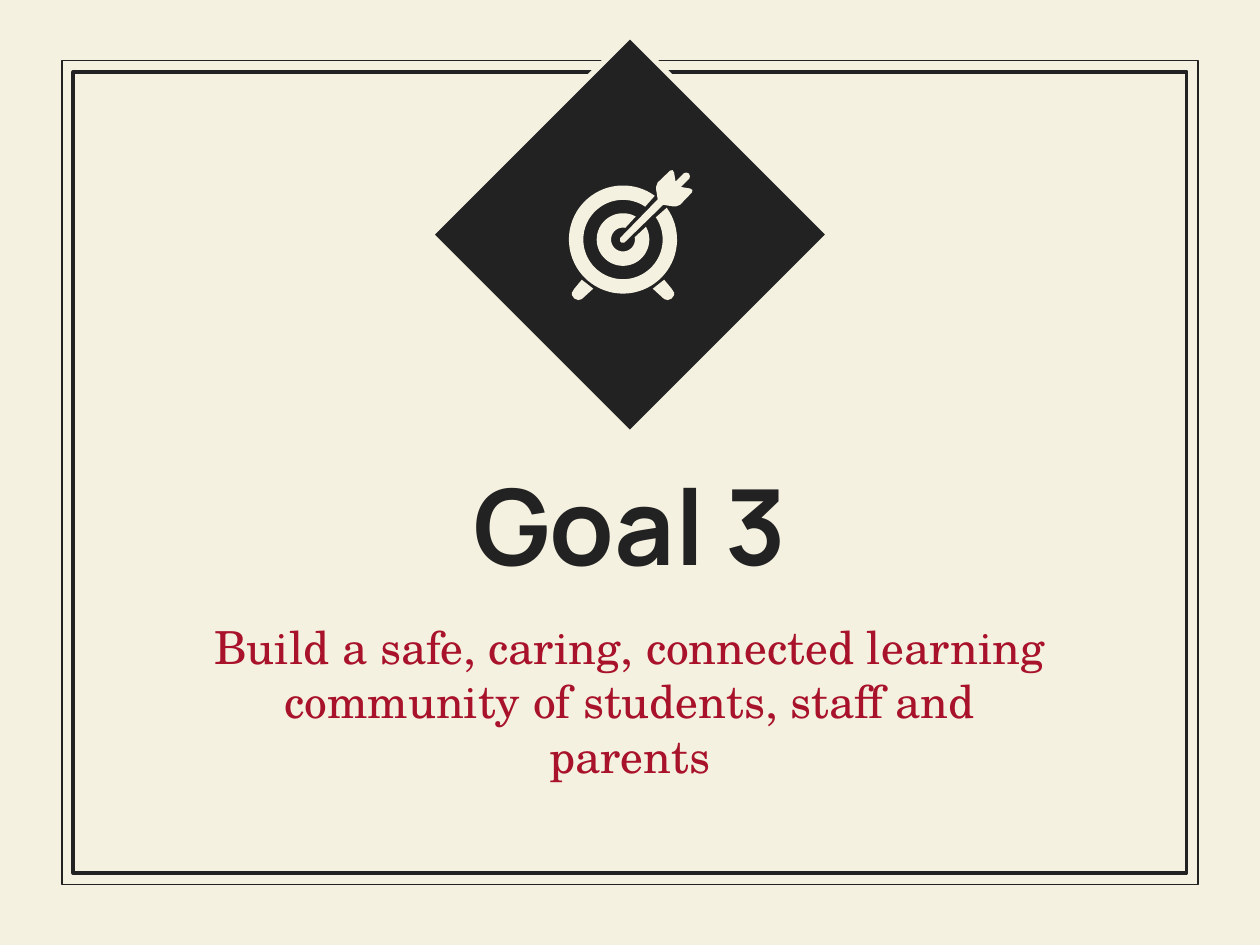
from math import cos, radians, sin

from pptx import Presentation
from pptx.dml.color import RGBColor
from pptx.enum.shapes import MSO_SHAPE
from pptx.enum.text import MSO_ANCHOR, MSO_AUTO_SIZE, PP_ALIGN
from pptx.util import Cm, Pt

RECT, DIAMOND = MSO_SHAPE.RECTANGLE, MSO_SHAPE.DIAMOND
MIDDLE, TOP = MSO_ANCHOR.MIDDLE, MSO_ANCHOR.TOP
CENTER, NO_FIT = PP_ALIGN.CENTER, MSO_AUTO_SIZE.NONE
TITLE_ONLY = 5

COLORS = {"paper": "F5F1E0", "ink": "222222", "red": "A8122A"}

# Icon outlines in cm from the centre of the target
LEG = [(-0.83, 0.81), (-0.98, 0.99), (-1.03, 1.07), (-1.03, 1.12), (-0.98, 1.19),
       (-0.9, 1.22), (-0.83, 1.2), (-0.6, 0.99)]
HALF_ARROW = [(-0.06, 0.03), (-0.06, -0.03), (0.7, -0.81), (0.67, -1), (0.67, -1.07),
              (0.7, -1.15), (0.95, -1.39), (1, -1.4), (1.03, -1.35), (1.06, -1.17),
              (1.23, -1.34), (1.28, -1.35), (1.33, -1.33)]


def rgb(name):
    return RGBColor.from_string(COLORS[name])


def style(sp, fill=None, line=None, width=1):
    sp.shadow.inherit = False
    if fill:
        sp.fill.solid()
        sp.fill.fore_color.rgb = rgb(fill)
    else:
        sp.fill.background()
    if line:
        sp.line.color.rgb = rgb(line)
        sp.line.width = Pt(width)
    else:
        sp.line.fill.background()


def write_text(sp, text, font, size, color, bold=False, anchor=TOP, before=0):
    tf = sp.text_frame
    tf.word_wrap = True
    tf.auto_size = NO_FIT
    tf.vertical_anchor = anchor
    tf.margin_left = tf.margin_right = tf.margin_top = tf.margin_bottom = Cm(0.25)
    p = tf.paragraphs[0]
    p.alignment = CENTER
    p.space_before = Pt(before)
    r = p.add_run()
    r.text = text
    r.font.name, r.font.size, r.font.bold = font, Pt(size), bold
    r.font.color.rgb = rgb(color)


def add_frame(s, x, y, w, h, gap=0.23):
    """Thin outer border and thick inner border."""
    for inset, width in ((0, 0.75), (gap, 2.25)):
        sp = s.shapes.add_shape(RECT, Cm(x + inset), Cm(y + inset),
                                Cm(w - 2 * inset), Cm(h - 2 * inset))
        style(sp, line="ink", width=width)


def add_outline(s, cx, cy, points):
    pts = [(Cm(cx + dx), Cm(cy + dy)) for dx, dy in points]
    builder = s.shapes.build_freeform(*pts[0])
    builder.add_line_segments(pts[1:], close=True)
    style(builder.convert_to_shape(), fill="paper")


def arc(radius, start, end, steps=72):
    angles = [radians(start + (end - start) * i / steps) for i in range(steps + 1)]
    return [(radius * cos(a), -radius * sin(a)) for a in angles]


def add_target(s, cx, cy):
    # Rings, open towards the arrow: radius and half opening, outside and inside
    for r_out, open_out, r_in, open_in in ((1.09, 9, 0.8, 11), (0.53, 16, 0.24, 34)):
        add_outline(s, cx, cy, arc(r_out, 45 + open_out, 405 - open_out)
                    + arc(r_in, 405 - open_in, 45 + open_in))
    # Legs
    for side in (1, -1):
        add_outline(s, cx, cy, [(side * dx, dy) for dx, dy in LEG])
    # Arrow, mirrored on the rising diagonal
    add_outline(s, cx, cy, HALF_ARROW + [(-dy, -dx) for dx, dy in HALF_ARROW[::-1]])


def add_emblem(s, x, y, size):
    sp = s.shapes.add_shape(DIAMOND, Cm(x), Cm(y), Cm(size), Cm(size))
    style(sp, fill="ink", line="paper", width=3)
    add_target(s, x + size / 2 - 0.14, y + size / 2 + 0.1)


def add_heading(s, x, y, w):
    title = s.shapes.title
    title.left, title.top, title.width, title.height = Cm(x), Cm(y), Cm(w), Cm(4.29)
    write_text(title, "Goal 3", "Manrope", 60, "ink", bold=True, anchor=MIDDLE)
    sub = s.shapes.add_textbox(Cm(x), Cm(y + 3.81), Cm(w), Cm(2.9))
    write_text(sub, "Build a safe, caring, connected learning community of "
               "students, staff and parents", "TeX Gyre Schola", 26, "red", before=6)


def main():
    prs = Presentation()
    prs.slide_width, prs.slide_height = Cm(25.4), Cm(19.05)
    s = prs.slides.add_slide(prs.slide_layouts[TITLE_ONLY])
    s.background.fill.solid()
    s.background.fill.fore_color.rgb = rgb("paper")
    add_frame(s, 1.25, 1.22, 22.9, 16.61)
    add_heading(s, 4, 8.41, 17.4)
    add_emblem(s, 8.69, 0.72, 8.02)
    prs.save("out.pptx")


if __name__ == "__main__":
    main()
